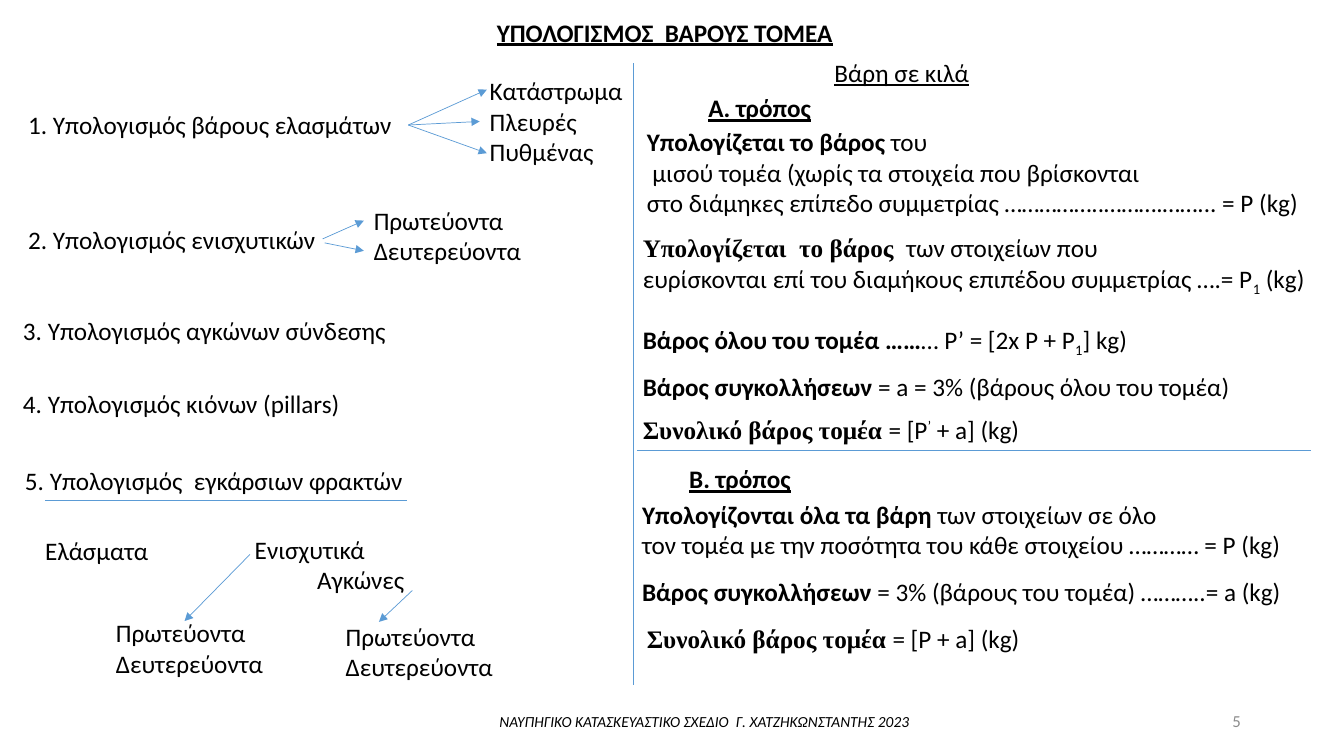
from lxml import etree
from pptx import Presentation
from pptx import util as u
from pptx.dml.color import RGBColor
from pptx.enum import shapes, text
from pptx.oxml import ns

THEME = {
    "ink": "000000", "pale": "8C8C8C", "line": "5B9BD5",
    "sans": "Calibri", "serif": "Times New Roman",
    "body": 18, "foot": 11, "page": 12, "rule": 0.5,
}
STYLES = {
    "plain": {},
    "bold": {"bold": True},
    "serif": {"bold": True, "name": THEME["serif"]},
    "under": {"underline": True},
    "head": {"bold": True, "underline": True},
    "foot": {"italic": True, "size": u.Pt(THEME["foot"])},
    "page": {"size": u.Pt(THEME["page"])},
    "sub": {"base": -25000},
    "sup": {"base": 30000},
}
PAIR = ["Πρωτεύοντα", "Δευτερεύοντα"]
NOTES = {
    "title": (12.27, 0.3, 10.69, [[("ΥΠΟΛΟΓΙΣΜΟΣ  ΒΑΡΟΥΣ ΤΟΜΕΑ", "head")]]),
    "plates": (0.46, 2.64, 9.83, ["1. Υπολογισμός βάρους ελασμάτων"]),
    "parts": (12.09, 1.78, 4.19, ["Κατάστρωμα", "Πλευρές", "Πυθμένας"]),
    "frames": (0.46, 5.54, 8.0, ["2. Υπολογισμός ενισχυτικών"]),
    "kinds": (9.17, 5.05, 4.24, PAIR),
    "knees": (0.33, 7.82, 10.08, ["3. Υπολογισμός αγκώνων σύνδεσης"]),
    "pillars": (0.33, 9.65, 8.97, ["4. Υπολογισμός κιόνων (pillars)"]),
    "walls": (0.38, 11.61, 10.19, ["5. Υπολογισμός  εγκάρσιων φρακτών"]),
    "sheets": (0.89, 13.36, 3.15, ["Ελάσματα"]),
    "stiff": (6.17, 13.34, 4.75, ["Ενισχυτικά", "Αγκώνες"]),
    "kinds one": (2.67, 15.44, 4.27, PAIR),
    "kinds two": (8.46, 15.52, 4.75, PAIR),
    "kilos": (20.78, 1.32, 4.37, [[("Βάρη σε κιλά", "under")]]),
    "way A": (17.6, 2.21, 3.18, [[("Α. τρόπος", "head")]]),
    "half": (16.05, 3.07, 16.97, [
        [("Υπολογίζεται το βάρος ", "bold"), ("του", "plain")],
        "μισού τομέα (χωρίς τα στοιχεία που βρίσκονται",
        "στο διάμηκες επίπεδο συμμετρίας ……………..……….……... = P (kg)"]),
    "axis": (15.95, 5.74, 17.58, [
        [("Υπολογίζεται  το βάρος  ", "serif"), ("των στοιχείων που", "plain")],
        [("ευρίσκονται επί του διαμήκους επιπέδου συμμετρίας ….= Ρ", "plain"),
         ("1", "sub"), (" (kg)", "plain")]]),
    "whole": (15.95, 8.05, 13.18, [
        [("Βάρος όλου του τομέα ……", "bold"), ("… P’ = [2x P + Ρ", "plain"),
         ("1", "sub"), ("] kg)", "plain")]]),
    "weld A": (15.95, 9.22, 15.8, [
        [("Βάρος συγκολλήσεων ", "bold"),
         ("= a = 3% (βάρους όλου του τομέα)", "plain")]]),
    "sum A": (15.95, 10.31, 12.45, [
        [("Συνολικό βάρος τομέα ", "serif"), ("= [P", "plain"),
         ("’", "sup"), (" + a] (kg)", "plain")]]),
    "way B": (17.12, 11.56, 3.18, [[("Β. τρόπος", "head")]]),
    "all": (15.93, 12.45, 17.04, [
        [("Υπολογίζονται όλα τα βάρη ", "bold"), ("των στοιχείων σε όλο", "plain")],
        "τον τομέα με την ποσότητα του κάθε στοιχείου ………… = Ρ (kg)"]),
    "weld B": (15.93, 14.4, 16.97, [
        [("Βάρος συγκολλήσεων ", "bold"),
         ("= 3% (βάρους του τομέα) ………..= a (kg)", "plain")]]),
    "sum B": (16.05, 15.57, 10.29, [
        [("Συνολικό βάρος τομέα ", "serif"), ("= [P + a] (kg)", "plain")]]),
    "foot": (6.99, 17.83, 21.54, [
        [("ΝΑΥΠΗΓΙΚΟ ΚΑΤΑΣΚΕΥΑΣΤΙΚΟ ΣΧΕΔΙΟ  Γ. ΧΑΤΖΗΚΩΝΣΤΑΝΤΗΣ 2023", "foot")]]),
    "page": (30.15, 17.65, 1.37, [[("5", "page")]]),
}
INDENTS = {("stiff", 1): 1.57, ("half", 1): 0.14}
ALIGNS = {"foot": text.PP_ALIGN.CENTER, "page": text.PP_ALIGN.RIGHT}
RULES = [
    ((15.95, 1.6), (15.95, 17.25)),
    ((16.05, 11.35), (33.05, 11.35)),
    ((1.14, 12.62), (10.26, 12.62)),
]
ARROWS = [
    ("plates", (12.27, 2.26)),
    ("plates", "parts"),
    ("plates", (12.27, 3.86)),
    ((8.13, 6.02), (9.17, 5.56)),
    ((8.18, 6.12), (9.17, 6.32)),
    ((6.3, 13.97), (4.65, 15.65)),
    ((10.39, 14.88), (9.55, 15.67)),
]
LINE, STEP = 1.02, 0.77

deck = Presentation()
deck.slide_width, deck.slide_height = u.Cm(33.87), u.Cm(19.05)
slide = deck.slides.add_slide(deck.slide_layouts[6])
boxes = {}


def write(par, words, style, ink):
    run = par.add_run()
    run.text = words
    form = {"name": THEME["sans"], "size": u.Pt(THEME["body"]), **STYLES[style]}
    base = form.pop("base", None)
    for key, value in form.items():
        setattr(run.font, key, value)
    run.font.color.rgb = RGBColor.from_string(ink)
    if base:
        run.font._element.set("baseline", str(base))


def add_note(name, left, top, width, lines):
    tall = LINE + STEP * (len(lines) - 1)
    box = slide.shapes.add_textbox(*map(u.Cm, (left, top, width, tall)))
    frame = box.text_frame
    frame.word_wrap = True
    if name == "page":
        frame.vertical_anchor = text.MSO_ANCHOR.MIDDLE
    else:
        frame.auto_size = text.MSO_AUTO_SIZE.SHAPE_TO_FIT_TEXT
    for row, line in enumerate(lines):
        par = frame.add_paragraph() if row else frame.paragraphs[0]
        if name in ALIGNS:
            par.alignment = ALIGNS[name]
        if (name, row) in INDENTS:
            par._p.get_or_add_pPr().set("marL", str(u.Cm(INDENTS[name, row])))
        runs = [(line, "plain")] if isinstance(line, str) else line
        for words, style in runs:
            write(par, words, style, THEME["pale" if name == "page" else "ink"])
    boxes[name] = box


def add_line(start, end, arrow=False):
    spots = [(0, 0) if isinstance(p, str) else p for p in (start, end)]
    link = slide.shapes.add_connector(
        shapes.MSO_CONNECTOR.STRAIGHT, *(u.Cm(v) for p in spots for v in p))
    if isinstance(start, str):
        link.begin_connect(boxes[start], 3)
    if isinstance(end, str):
        link.end_connect(boxes[end], 1)
    link.line.color.rgb = RGBColor.from_string(THEME["line"])
    link.line.width = u.Pt(THEME["rule"])
    if arrow:
        tip = etree.SubElement(link.line._get_or_add_ln(), ns.qn("a:tailEnd"))
        tip.set("type", "triangle")
    etree.SubElement(link._element.spPr, ns.qn("a:effectLst"))


for name, note in NOTES.items():
    add_note(name, *note)
for ends in RULES:
    add_line(*ends)
for ends in ARROWS:
    add_line(*ends, arrow=True)

deck.save("out.pptx")
